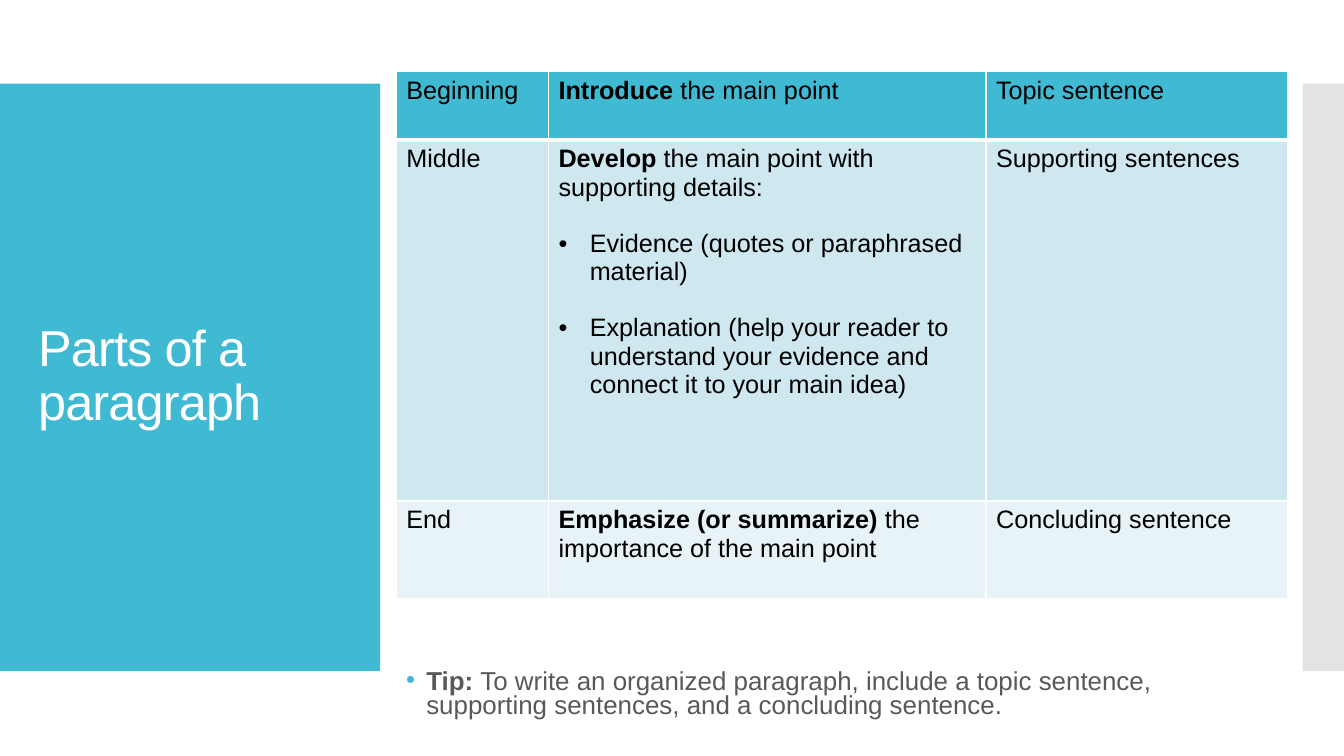
from lxml import etree
from pptx import Presentation
from pptx.dml.color import RGBColor
from pptx.enum import shapes, text
from pptx.oxml.ns import qn
from pptx.util import Inches, Pt

THEME = {
    "font": "Arial", "title": 36, "cell": 18, "tip": 18.5,
    "teal": "40BAD2", "gray": "E3E3E3", "white": "FFFFFF",
    "black": "000000", "soft": "595959",
    "rows": ["40BAD2", "CFE7EE", "E8F3F7"],
}
TITLE = "Parts of a paragraph"
# Each cell is a list of paragraphs: (bulleted, [(words, bold), ...])
GRID = [
    [[(False, [("Beginning", False)])],
     [(False, [("Introduce", True), (" the main point", False)])],
     [(False, [("Topic sentence", False)])]],
    [[(False, [("Middle", False)])],
     [(False, [("Develop", True),
               (" the main point with supporting details:", False)]),
      (True, [("Evidence (quotes or paraphrased material)", False)]),
      (True, [("Explanation (help your reader to understand your evidence "
               "and connect it to your main idea)", False)])],
     [(False, [("Supporting sentences", False)])]],
    [[(False, [("End", False)])],
     [(False, [("Emphasize (or summarize) ", True),
               ("the importance of the main point", False)])],
     [(False, [("Concluding sentence", False)])]],
]
TIP = [("Tip: ", True),
       ("To write an organized paragraph, include a topic sentence, "
        "supporting sentences, and a concluding sentence.", False)]
COLS = [1.51, 4.34, 2.99]
ROWS = [0.68, 3.58, 0.97]
PANELS = [(0, 3.77, "teal"), (12.92, 0.41, "gray")]


def color(code):
    return RGBColor.from_string(code)


def write(para, runs, size, tint):
    for words, bold in runs:
        run = para.add_run()
        run.text = words
        font = run.font
        font.name, font.size, font.bold = THEME["font"], Pt(size), bold
        font.color.rgb = color(THEME[tint])
    return para


def bullet(para, indent, tint=None):
    """Give the paragraph a hanging dot, coloured if a tint is named."""
    props = para._p.get_or_add_pPr()
    props.set("marL", str(Inches(indent)))
    props.set("indent", str(-Inches(indent)))
    if tint:
        hue = etree.SubElement(props, qn("a:buClr"))
        etree.SubElement(hue, qn("a:srgbClr"), val=THEME[tint])
    etree.SubElement(props, qn("a:buFont"), typeface=THEME["font"])
    etree.SubElement(props, qn("a:buChar"), char="•")


def border(cell, widths):
    """Draw white lines; widths are in points for left, right, top, bottom."""
    props = cell._tc.get_or_add_tcPr()
    for place, (side, width) in enumerate(zip("LRTB", widths)):
        line = etree.Element(qn("a:ln" + side), w=str(Pt(width)))
        fill = etree.SubElement(line, qn("a:solidFill"))
        etree.SubElement(fill, qn("a:srgbClr"), val=THEME["white"])
        props.insert(place, line)


def add_box(slide, *place):
    frame = slide.shapes.add_textbox(*map(Inches, place)).text_frame
    frame.word_wrap = True
    frame.vertical_anchor = text.MSO_ANCHOR.MIDDLE
    return frame


def add_grid(slide):
    table = slide.shapes.add_table(
        len(ROWS), len(COLS), Inches(3.93), Inches(0.71),
        Inches(sum(COLS)), Inches(sum(ROWS))).table
    for col, width in zip(table.columns, COLS):
        col.width = Inches(width)
    for r, (row, height) in enumerate(zip(GRID, ROWS)):
        table.rows[r].height = Inches(height)
        for c, paras in enumerate(row):
            cell = table.cell(r, c)
            cell.fill.solid()
            cell.fill.fore_color.rgb = color(THEME["rows"][r])
            border(cell, (1, 1, 3 if r == 1 else 1, 3 if r == 0 else 1))
            frame = cell.text_frame
            for n, (dot, runs) in enumerate(paras):
                para = frame.add_paragraph() if n else frame.paragraphs[0]
                write(para, runs, THEME["cell"], "black")
                if dot:
                    para.space_before = Pt(20)
                    bullet(para, 0.31)


def main():
    deck = Presentation()
    deck.slide_width, deck.slide_height = Inches(13.33), Inches(7.5)
    slide = deck.slides.add_slide(deck.slide_layouts[6])

    for left, width, tint in PANELS:
        panel = slide.shapes.add_shape(
            shapes.MSO_SHAPE.RECTANGLE, Inches(left), Inches(0.83),
            Inches(width), Inches(5.83))
        panel.shadow.inherit = False
        panel.fill.solid()
        panel.fill.fore_color.rgb = color(THEME[tint])
        panel.line.fill.background()

    title = add_box(slide, 0.28, 1.23, 3.22, 5.03).paragraphs[0]
    title.line_spacing = 0.9
    write(title, [(TITLE, False)], THEME["title"], "white")
    title.runs[0].font._element.set("spc", "-60")

    add_grid(slide)

    frame = add_box(slide, 3.93, 6.26, 8, 1.07)
    frame.margin_top = Inches(0.25)
    tip = write(frame.paragraphs[0], TIP, THEME["tip"], "soft")
    tip.line_spacing = 0.8
    bullet(tip, 0.2, "teal")

    deck.save("out.pptx")


if __name__ == "__main__":
    main()
